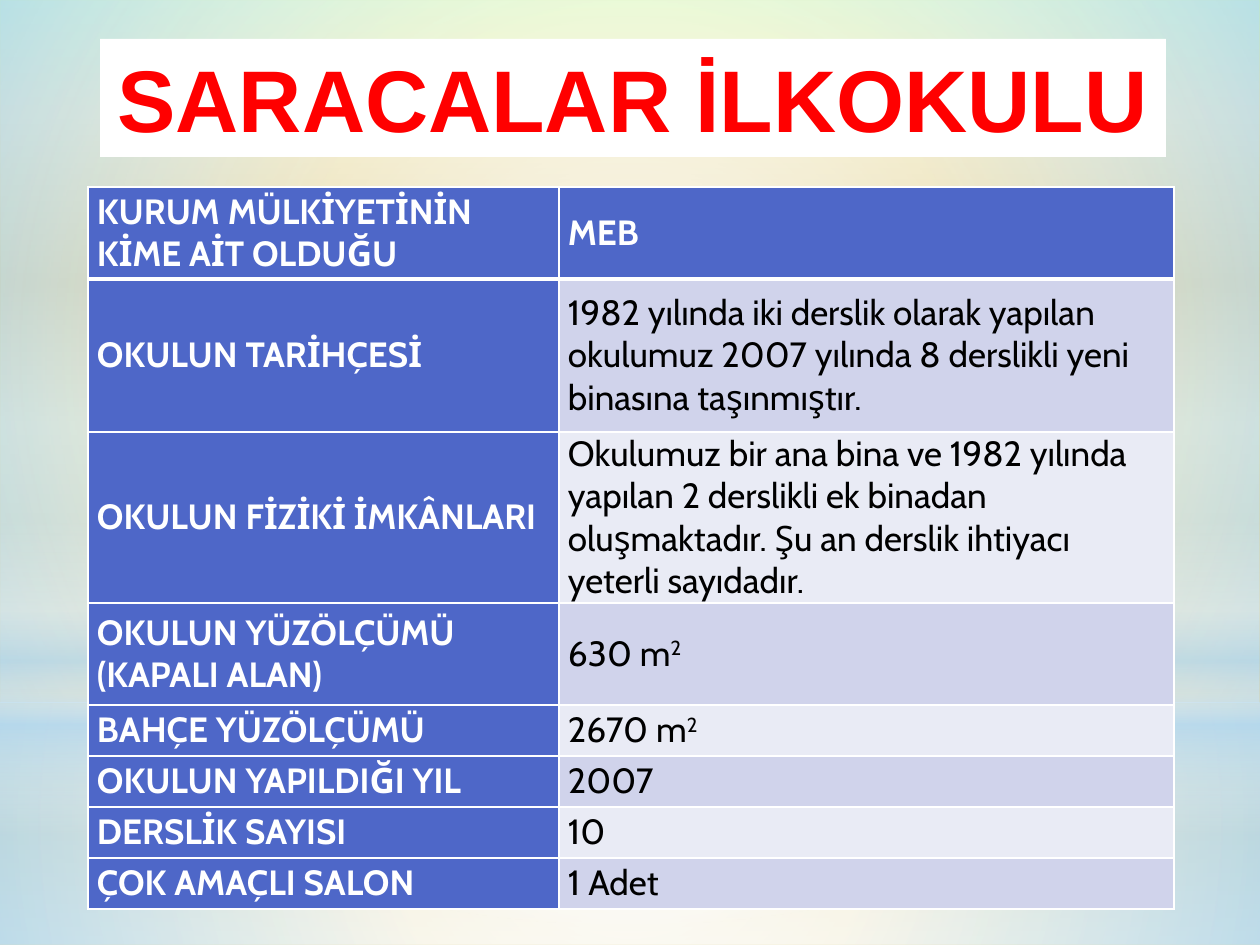
"""Build the fact table slide of a primary school."""
from dataclasses import dataclass

import lxml.etree
import pptx
import pptx.dml.color
import pptx.enum.shapes
import pptx.enum.text
import pptx.oxml
import pptx.oxml.ns
import pptx.util

EMU_PER_PX = 914400 / 126
COLORS = {
    "white": "FFFFFF", "black": "000000", "red": "FF0000", "sky": "B4DCFA",
    "blue": "4E67C8", "band": "D0D3EB", "pale": "E9EBF5",
    "lime": "CAF297", "straw": "E6D78A", "gold": "C7AC4C", "sand": "E6DCAC",
}
RECTANGLE = pptx.enum.shapes.MSO_SHAPE.RECTANGLE
OVAL = pptx.enum.shapes.MSO_SHAPE.OVAL
MIDDLE = pptx.enum.text.MSO_ANCHOR.MIDDLE


@dataclass(frozen=True)
class Stop:
    position: int
    color: str
    opacity: int = 100


@dataclass(frozen=True)
class Glow:
    kind: int
    top: int
    height: int
    stops: tuple[Stop, ...]
    radial: bool = True


@dataclass(frozen=True)
class Fact:
    label: str
    value: str
    height: int = 51
    superscript: str = ""


BACKDROP = (Stop(0, "lime"), Stop(12, "straw"), Stop(30, "gold"),
            Stop(45, "straw"), Stop(77, "gold"), Stop(100, "sand"))
GLOWS = (
    Glow(RECTANGLE, 703, 242,
         (Stop(0, "white", 91), Stop(37, "white", 76), Stop(100, "sky", 79))),
    Glow(RECTANGLE, 0, 703,
         (Stop(0, "white", 89), Stop(48, "white", 62), Stop(100, "sky", 79))),
    Glow(RECTANGLE, 519, 315,
         (Stop(0, "white", 0), Stop(29, "white", 30), Stop(45, "sky", 40),
          Stop(55, "white", 26), Stop(65, "sky", 60), Stop(100, "white", 0)), False),
    Glow(OVAL, 220, 703, (Stop(0, "white"), Stop(56, "white", 0))),
)
FACTS = (
    Fact("KURUM MÜLKİYETİNİN KİME AİT OLDUĞU", "MEB", 92),
    Fact("OKULUN TARİHÇESİ", "1982 yılında iki derslik olarak yapılan okulumuz "
         "2007 yılında 8 derslikli yeni binasına taşınmıştır.", 153),
    Fact("OKULUN FİZİKİ İMKÂNLARI", "Okulumuz bir ana bina ve 1982 yılında yapılan "
         "2 derslikli ek binadan oluşmaktadır. Şu an derslik ihtiyacı yeterli "
         "sayıdadır.", 171),
    Fact("OKULUN YÜZÖLÇÜMÜ (KAPALI ALAN)", "630 m", 102, "2"),
    Fact("BAHÇE YÜZÖLÇÜMÜ", "2670 m", superscript="2"),
    Fact("OKULUN YAPILDIĞI YIL", "2007"),
    Fact("DERSLİK SAYISI", "10"),
    Fact("ÇOK AMAÇLI SALON", "1 Adet"),
)
COLUMN_WIDTHS = (471, 615)


def px(length: int) -> pptx.util.Emu:
    """Turn px into EMU."""
    return pptx.util.Emu(round(length * EMU_PER_PX))


def rgb(name: str) -> pptx.dml.color.RGBColor:
    """Look up a named colour."""
    return pptx.dml.color.RGBColor.from_string(COLORS[name])


def fill_gradient(owner, fill, stops: tuple[Stop, ...], radial: bool) -> None:
    """Give the owner's fill a gradient with any number of stops."""
    fill.gradient()
    old = owner.find(".//" + pptx.oxml.ns.qn("a:gradFill"))
    marks = "".join(
        f'<a:gs pos="{stop.position * 1000}"><a:srgbClr val="{COLORS[stop.color]}">'
        f'<a:alpha val="{stop.opacity * 1000}"/></a:srgbClr></a:gs>' for stop in stops)
    course = ('<a:path path="circle"><a:fillToRect l="50000" t="50000" r="50000" '
              'b="50000"/></a:path>' if radial else '<a:lin ang="5400000" scaled="0"/>')
    new = pptx.oxml.parse_xml(
        f'<a:gradFill {pptx.oxml.ns.nsdecls("a")} rotWithShape="1">'
        f'<a:gsLst>{marks}</a:gsLst>{course}</a:gradFill>')
    old.getparent().replace(old, new)


def draw_glow(page, glow: Glow) -> None:
    """Draw one translucent layer across the page."""
    shape = page.shapes.add_shape(glow.kind, 0, px(glow.top), px(1260), px(glow.height))
    shape.shadow.inherit = False
    shape.line.fill.background()
    fill_gradient(shape.element, shape.fill, glow.stops, glow.radial)


def style_text(para, font: str, size: int, color: str, bold: bool) -> None:
    """Set the font of a paragraph."""
    para.font.name = font
    para.font.size = pptx.util.Pt(size)
    para.font.bold = bold
    para.font.color.rgb = rgb(color)


def draw_borders(cell, bottom: int) -> None:
    """Put white lines around a cell, the bottom one in its own width."""
    properties = cell._tc.get_or_add_tcPr()
    for index, (side, width) in enumerate(
            (("lnL", 1), ("lnR", 1), ("lnT", 1), ("lnB", bottom))):
        line = lxml.etree.Element(pptx.oxml.ns.qn(f"a:{side}"), w=str(pptx.util.Pt(width)))
        solid = lxml.etree.SubElement(line, pptx.oxml.ns.qn("a:solidFill"))
        lxml.etree.SubElement(solid, pptx.oxml.ns.qn("a:srgbClr"), val=COLORS["white"])
        properties.insert(index, line)


def fill_cell(cell, text: str, superscript: str, fill: str, strong: bool,
              bottom: int) -> None:
    """Write and style one table cell."""
    cell.vertical_anchor = MIDDLE
    cell.margin_left = cell.margin_right = px(9)
    cell.margin_top = cell.margin_bottom = 0
    cell.fill.solid()
    cell.fill.fore_color.rgb = rgb(fill)
    draw_borders(cell, bottom)
    para = cell.text_frame.paragraphs[0]
    style_text(para, "Cabin", 20, "white" if strong else "black", strong)
    para.add_run().text = text
    if superscript:
        span = para.add_run()
        span.text = superscript
        span._r.get_or_add_rPr().set("baseline", "30000")


def draw_facts(page, facts: tuple[Fact, ...]) -> None:
    """Draw the table of school facts."""
    frame = page.shapes.add_table(
        len(facts), len(COLUMN_WIDTHS), px(88), px(187), px(sum(COLUMN_WIDTHS)),
        px(sum(fact.height for fact in facts)))
    table = frame.table
    table.first_row = table.horz_banding = False
    for column, width in zip(table.columns, COLUMN_WIDTHS):
        column.width = px(width)
    for index, fact in enumerate(facts):
        table.rows[index].height = px(fact.height)
        header = index == 0
        bottom = 3 if header else 1
        shade = "blue" if header else "band" if index % 2 else "pale"
        fill_cell(table.cell(index, 0), fact.label, "", "blue", True, bottom)
        fill_cell(table.cell(index, 1), fact.value, fact.superscript, shade, header, bottom)


def draw_title(page, text: str) -> None:
    """Draw the school name on its white plate."""
    box = page.shapes.add_textbox(px(100), px(39), px(1066), px(118))
    box.fill.solid()
    box.fill.fore_color.rgb = rgb("white")
    box.text_frame.word_wrap = False
    para = box.text_frame.paragraphs[0]
    para.alignment = pptx.enum.text.PP_ALIGN.CENTER
    style_text(para, "Arial", 50, "red", True)
    para.add_run().text = text


def main() -> None:
    """Build and save the deck."""
    deck = pptx.Presentation()
    deck.slide_width, deck.slide_height = px(1260), px(945)
    page = deck.slides.add_slide(deck.slide_layouts[6])
    fill_gradient(page.element, page.background.fill, BACKDROP, False)
    for glow in GLOWS:
        draw_glow(page, glow)
    draw_facts(page, FACTS)
    draw_title(page, "SARACALAR İLKOKULU")
    deck.save("out.pptx")


if __name__ == "__main__":
    main()
